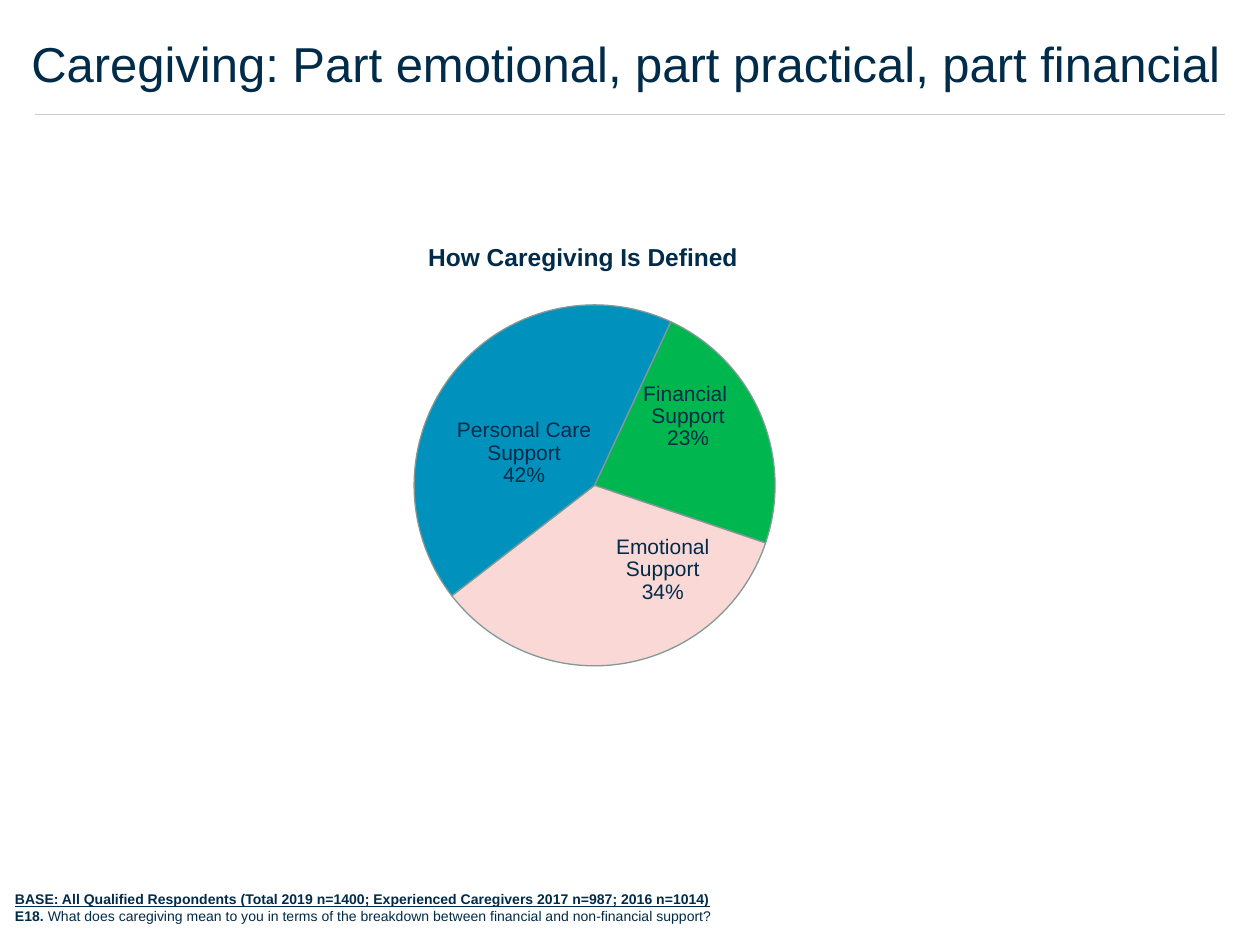
from lxml import etree
from pptx import Presentation
from pptx.chart.data import CategoryChartData
from pptx.dml.color import RGBColor
from pptx.enum.chart import XL_CHART_TYPE, XL_LABEL_POSITION
from pptx.enum.shapes import MSO_CONNECTOR
from pptx.oxml import parse_xml
from pptx.oxml.ns import nsdecls, qn
from pptx.util import Inches, Pt

PIE = XL_CHART_TYPE.PIE
CENTER = XL_LABEL_POSITION.CENTER
STRAIGHT = MSO_CONNECTOR.STRAIGHT

COLORS = {
    "navy": "002B49",
    "rule": "CCCCCC",
    "outline": "829995",
    "financial": "00B74F",
    "emotional": "F9D8D6",
    "personal": "0092BC",
}

# Category, share, colour, label shift as a fraction of the chart
SUPPORT_TYPES = [
    ("Financial \nSupport", 0.23, "financial", {"x": 0.01, "y": -0.07}),
    ("Emotional Support", 0.34, "emotional", {"x": 0.05, "y": -0.01}),
    ("Personal Care Support", 0.42, "personal", {"x": 0, "y": 0.05}),
]
PIE_AREA = {"x": 0.34, "y": 0.11, "w": 0.34, "h": 0.75}
FIRST_SLICE_ANGLE = 25


def color(name):
    return RGBColor.from_string(COLORS[name])


def manual_layout(values, edge=False):
    """Chart layout element; edge measures from the chart's corner."""
    modes = '<c:xMode val="edge"/><c:yMode val="edge"/>' if edge else ""
    parts = "".join(f'<c:{key} val="{value}"/>' for key, value in values.items())
    return parse_xml(
        f'<c:layout {nsdecls("c")}><c:manualLayout>{modes}{parts}'
        "</c:manualLayout></c:layout>"
    )


class SlideBuilder:
    font_name = "Arial"
    text_color = "navy"

    def __init__(self, slide):
        self.slide = slide

    def style(self, font, **format_values):
        font.color.rgb = color(self.text_color)
        for key, value in {"name": self.font_name, **format_values}.items():
            setattr(font, key, value)

    def text(self, box, paragraphs, wrap=True):
        frame = self.slide.shapes.add_textbox(*map(Inches, box)).text_frame
        frame.word_wrap = wrap
        for index, runs in enumerate(paragraphs):
            paragraph = frame.add_paragraph() if index else frame.paragraphs[0]
            for words, format_values in runs:
                run = paragraph.add_run()
                run.text = words
                self.style(run.font, **format_values)

    def line(self, start, end, line_color, width):
        rule = self.slide.shapes.add_connector(
            STRAIGHT, *map(Inches, (*start, *end)))
        rule.line.color.rgb = color(line_color)
        rule.line.width = Pt(width)
        etree.SubElement(rule._element.spPr, qn("a:effectLst"))

    def slice(self, point, fill, shift):
        point.format.fill.solid()
        point.format.fill.fore_color.rgb = color(fill)
        point.format.line.color.rgb = color("outline")
        point.format.line.width = Pt(0.75)
        label = point.data_label
        label.position = CENTER
        self.style(label.font, size=Pt(12))
        # Category above value, moved from the slice's centre
        element = label._get_or_add_dLbl()
        element.find(qn("c:showCatName")).set("val", "1")
        element.find(qn("c:idx")).addnext(manual_layout(shift))
        etree.SubElement(element, qn("c:separator")).text = "\n"

    def pie(self, box, support_types):
        data = CategoryChartData(number_format="0%")
        data.categories = [name for name, *_ in support_types]
        data.add_series("Series 1", [share for _, share, *_ in support_types])
        chart = self.slide.shapes.add_chart(PIE, *map(Inches, box), data).chart
        chart.has_title = False
        chart.has_legend = False
        self.style(chart.font, size=Pt(18))

        plot = chart.plots[0]
        plot.vary_by_categories = True
        series = plot.series[0]
        labels = series.data_labels
        labels.show_value = True
        labels.show_category_name = True
        labels.number_format = "0%"
        labels.number_format_is_linked = False
        self.style(labels.font, size=Pt(12))
        for index, (_, _, fill, shift) in enumerate(support_types):
            self.slice(series.points[index], fill, shift)

        # Pie size and rotation
        plot_area = chart._chartSpace.chart.plotArea
        for old in plot_area.findall(qn("c:layout")):
            plot_area.remove(old)
        plot_area.insert(0, manual_layout(PIE_AREA, edge=True))
        pie_chart = plot_area.find(qn("c:pieChart"))
        angle = pie_chart.find(qn("c:firstSliceAng"))
        if angle is None:
            angle = etree.SubElement(pie_chart, qn("c:firstSliceAng"))
        angle.set("val", str(FIRST_SLICE_ANGLE))


def main():
    deck = Presentation()
    deck.slide_width = Inches(10)
    deck.slide_height = Inches(7.5)
    builder = SlideBuilder(deck.slides.add_slide(deck.slide_layouts[6]))

    # Heading and rule
    builder.text((0.15, 0.22, 9.85, 0.57), [[
        ("Caregiving: Part emotional, part practical, part financial",
         {"size": Pt(28)})]])
    builder.line((0.28, 0.91), (9.72, 0.91), "rule", 0.75)

    # Pie with its title
    builder.pie((0.41, 2, 8.45, 3.82), SUPPORT_TYPES)
    builder.text((3.3, 1.87, 2.67, 0.34), [[
        ("How Caregiving Is Defined", {"size": Pt(14), "bold": True})]], wrap=False)

    # Survey base and question
    note = {"size": Pt(8)}
    strong = {**note, "bold": True}
    builder.text((0.02, 7.02, 6.89, 0.37), [
        [("BASE: All Qualified Respondents (Total 2019 n=1400; "
          "Experienced Caregivers 2017 n=987; 2016 n=1014)",
          {**strong, "underline": True})],
        [("E18. ", strong),
         ("What does caregiving mean to you in terms of the breakdown "
          "between financial and non-financial support?", note)],
    ])

    deck.save("out.pptx")


if __name__ == "__main__":
    main()
